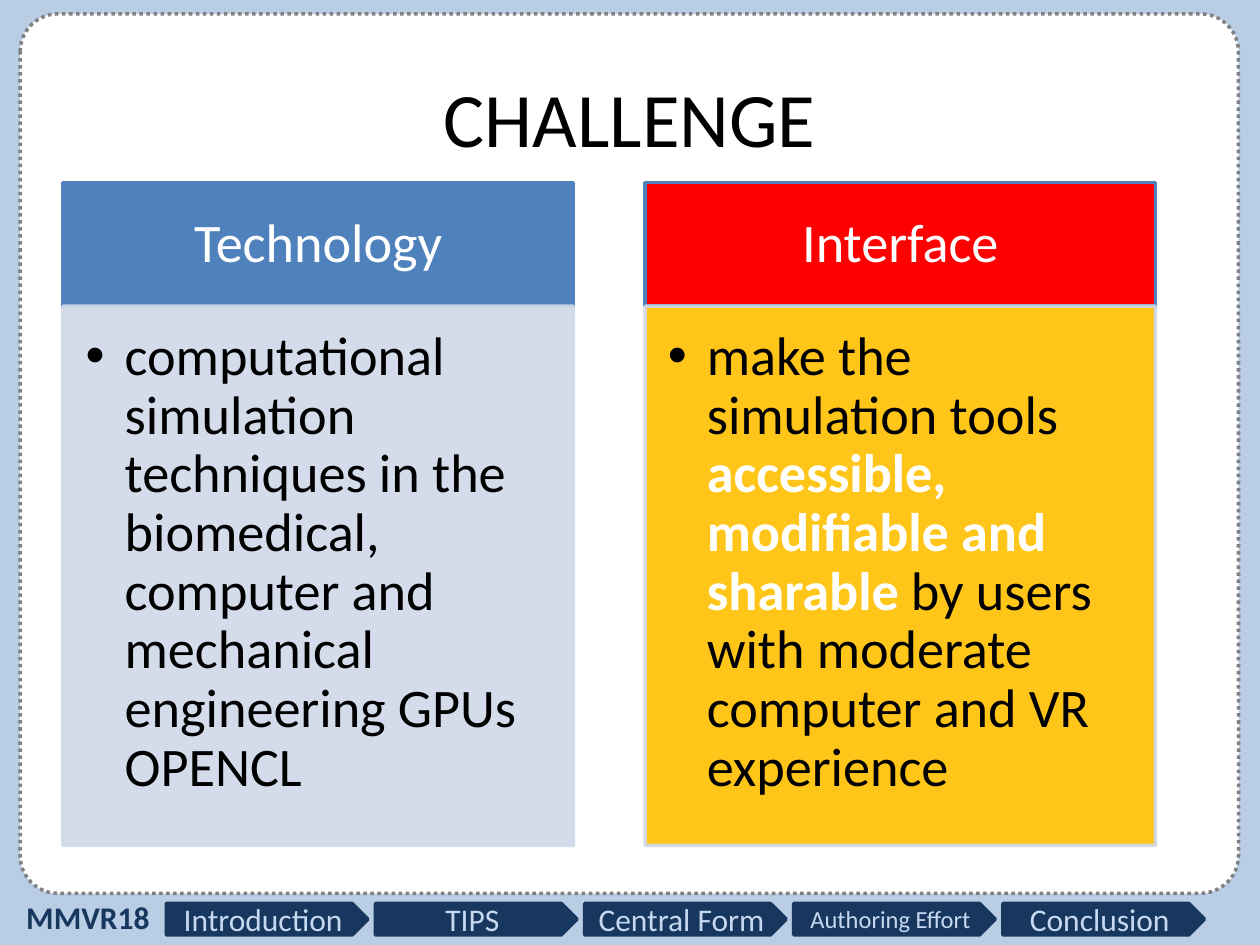
from dataclasses import dataclass

import pptx
import pptx.util
from pptx.dml.color import RGBColor
from pptx.enum.dml import MSO_LINE
from pptx.enum.shapes import MSO_SHAPE
from pptx.enum.text import MSO_ANCHOR, PP_ALIGN
from pptx.oxml.ns import qn
from pptx.util import Inches, Pt

FONT = "Calibri"
WHITE = RGBColor(0xFF, 0xFF, 0xFF)
BLACK = RGBColor(0x00, 0x00, 0x00)
SKY = RGBColor(0xB9, 0xCD, 0xE5)
GRAY = RGBColor(0x80, 0x80, 0x80)
NAVY = RGBColor(0x17, 0x37, 0x5E)
ICE = RGBColor(0xC6, 0xD9, 0xF1)
BLUE = RGBColor(0x4F, 0x81, 0xBD)
PALE = RGBColor(0xD0, 0xD8, 0xE8)
RED = RGBColor(0xFF, 0x00, 0x00)
GOLD = RGBColor(0xFF, 0xC0, 0x00)


@dataclass
class Span:
    text: str
    color: RGBColor = BLACK
    bold: bool = False


@dataclass
class Column:
    heading: str
    head_fill: RGBColor
    body_fill: RGBColor
    spans: list[Span]


@dataclass
class Step:
    label: str
    size: int = 18


COLUMNS = [
    Column("Technology", BLUE, PALE, [
        Span("computational simulation techniques in the biomedical, "
             "computer and mechanical engineering GPUs OPENCL")]),
    Column("Interface", RED, GOLD, [
        Span("make the simulation tools "),
        Span("accessible, modifiable and sharable ", WHITE, True),
        Span("by users with moderate computer and VR experience")]),
]
STEPS = [Step("Introduction"), Step("TIPS"), Step("Central Form"),
         Step("Authoring Effort", 14), Step("Conclusion")]


def add_box(slide, kind, left: float, top: float, width: float, height: float,
            fill: RGBColor, line: RGBColor):
    s = slide.shapes.add_shape(kind, Inches(left), Inches(top),
                               Inches(width), Inches(height))
    s.shadow.inherit = False
    s.fill.solid()
    s.fill.fore_color.rgb = fill
    s.line.color.rgb = line
    s.line.width = Pt(2)
    return s


def add_run(p, span: Span, size: int) -> None:
    r = p.add_run()
    r.text = span.text
    r.font.name = FONT
    r.font.size = Pt(size)
    r.font.bold = span.bold
    r.font.color.rgb = span.color


def set_margins(tf, left: float, top: float, right: float, bottom: float) -> None:
    tf.margin_left, tf.margin_top = Inches(left), Inches(top)
    tf.margin_right, tf.margin_bottom = Inches(right), Inches(bottom)


def set_opacity(s, percent: int) -> None:
    """Apply one opacity to both the fill and the outline."""
    for color in s._element.spPr.iter(qn("a:srgbClr")):
        alpha = color.makeelement(qn("a:alpha"), {"val": str(percent * 1000)})
        color.append(alpha)


def add_bullet(p, indent: float) -> None:
    pPr = p._p.get_or_add_pPr()
    pPr.set("marL", str(Inches(indent)))
    pPr.set("indent", str(-Inches(indent)))
    for tag, attrs in (("a:buFont", {"typeface": "Arial"}),
                       ("a:buChar", {"char": "•"})):
        pPr.append(pPr.makeelement(qn(tag), attrs))


def add_column(slide, column: Column, left: float) -> None:
    width, top, head_height, body_height = 4.05, 1.45, 0.98, 4.28
    head = add_box(slide, MSO_SHAPE.RECTANGLE, left, top, width, head_height,
                   column.head_fill, BLUE)
    set_margins(head.text_frame, 0.24, 0.14, 0.24, 0.14)
    p = head.text_frame.paragraphs[0]
    p.alignment = PP_ALIGN.CENTER
    p.line_spacing = 0.9
    add_run(p, Span(column.heading, WHITE), 31)

    body = add_box(slide, MSO_SHAPE.RECTANGLE, left, top + head_height, width,
                   body_height, column.body_fill, PALE)
    set_opacity(body, 90)
    tf = body.text_frame
    tf.vertical_anchor = MSO_ANCHOR.TOP
    set_margins(tf, 0.18, 0.18, 0.24, 0.27)
    p = tf.paragraphs[0]
    p.alignment = PP_ALIGN.LEFT
    p.line_spacing = 0.9
    add_bullet(p, 0.31)
    for span in column.spans:
        add_run(p, span, 31)


def add_step(slide, step: Step, left: float) -> None:
    s = add_box(slide, MSO_SHAPE.PENTAGON, left, 7.17, 1.6, 0.25, NAVY, NAVY)
    s.text_frame.vertical_anchor = MSO_ANCHOR.MIDDLE
    p = s.text_frame.paragraphs[0]
    p.alignment = PP_ALIGN.CENTER
    add_run(p, Span(step.label, ICE), step.size)


def add_title(slide, text: str) -> None:
    title = slide.shapes.title
    title.left, title.top = Inches(0.5), Inches(0.3)
    title.width, title.height = Inches(9), Inches(1.25)
    title.text_frame.vertical_anchor = MSO_ANCHOR.MIDDLE
    p = title.text_frame.paragraphs[0]
    p.alignment = PP_ALIGN.CENTER
    add_run(p, Span(text), 44)
    # Bring the title in front of the white panel.
    slide.shapes._spTree.append(title._element)


def main() -> None:
    prs = pptx.Presentation()
    prs.slide_width, prs.slide_height = Inches(10), Inches(7.5)
    slide = prs.slides.add_slide(prs.slide_layouts[5])
    slide.background.fill.solid()
    slide.background.fill.fore_color.rgb = SKY

    panel = add_box(slide, MSO_SHAPE.ROUNDED_RECTANGLE, 0.16, 0.11, 9.67, 6.98,
                    WHITE, GRAY)
    panel.adjustments[0] = 0.043
    panel.line.dash_style = MSO_LINE.ROUND_DOT

    for i, step in enumerate(STEPS):
        add_step(slide, step, 1.32 + i * 1.66)
    tag = slide.shapes.add_textbox(Inches(0.11), Inches(7.08),
                                   Inches(1.19), Inches(0.4))
    tag.text_frame.word_wrap = False
    add_run(tag.text_frame.paragraphs[0], Span("MMVR18", NAVY, True), 18)

    for i, column in enumerate(COLUMNS):
        add_column(slide, column, 0.5 + i * 4.62)
    add_title(slide, "CHALLENGE")
    prs.save("out.pptx")


if __name__ == "__main__":
    main()
